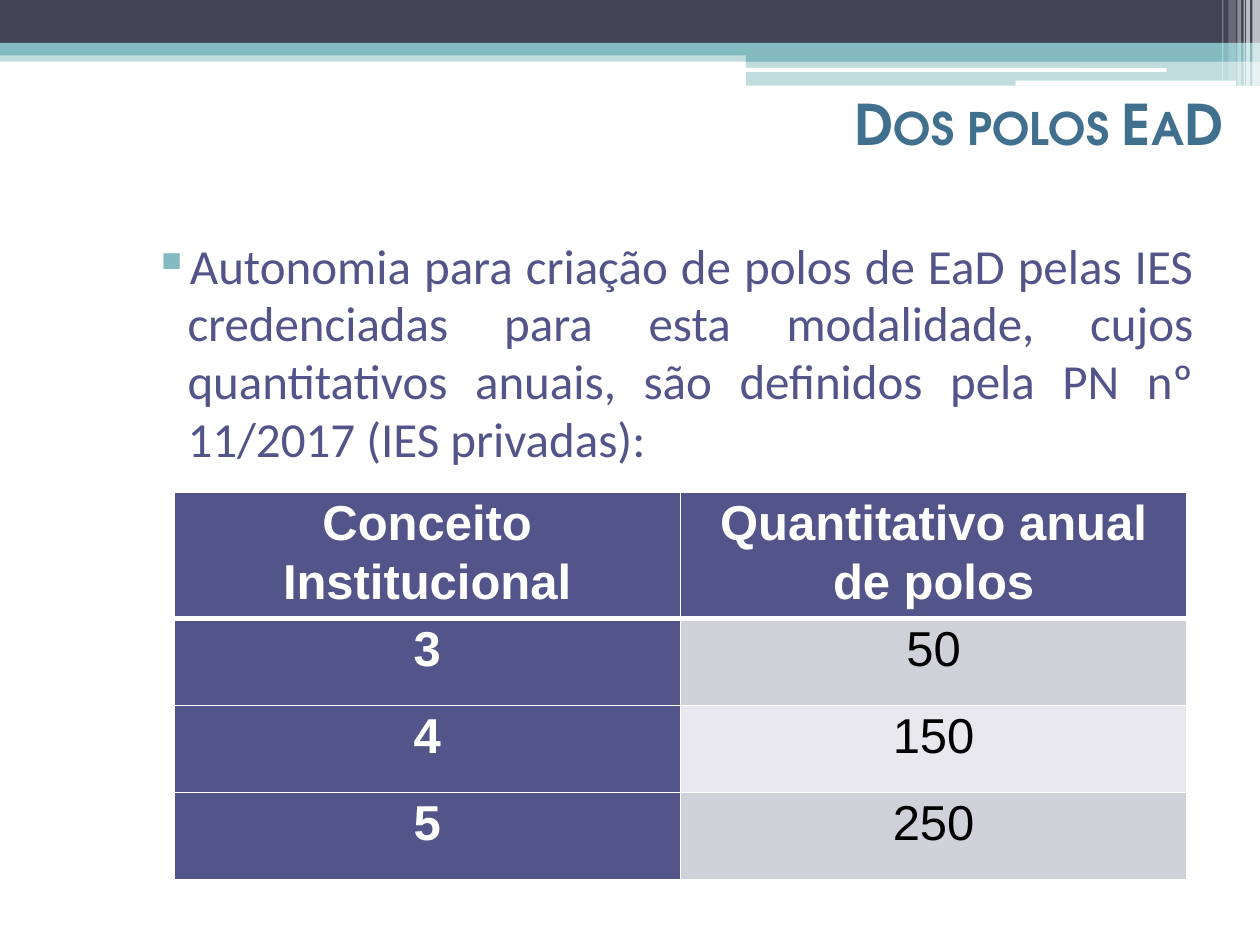
from lxml import etree
from pptx import Presentation
from pptx import util as u
from pptx.dml.color import RGBColor
from pptx.enum import shapes, text
from pptx.oxml import ns

WHITE = RGBColor(0xFF, 0xFF, 0xFF)
BLACK = RGBColor(0x00, 0x00, 0x00)
TEAL = RGBColor(0x83, 0xBB, 0xC1)
SLATE = RGBColor(0x42, 0x44, 0x56)
BLUE = RGBColor(0x41, 0x70, 0x8E)
PLUM = RGBColor(0x53, 0x54, 0x8A)
GRAY = RGBColor(0xD1, 0xD1, 0xDA)
PALE = RGBColor(0xE9, 0xE9, 0xED)

deck = Presentation()
deck.slide_width, deck.slide_height = u.Inches(10), u.Inches(7.5)
COL, ROW = deck.slide_width / 100, deck.slide_height / 75
slide = deck.slides.add_slide(deck.slide_layouts[5])


def grid(x, y, wide, high):
    return int(x * COL), int(y * ROW), int(wide * COL), int(high * ROW)


def style(para, face, size, color, bold, align):
    para.alignment = align
    font = para.font
    font.name, font.size, font.bold = face, u.Pt(size), bold
    font.color.rgb = color


RECT = shapes.MSO_SHAPE.RECTANGLE
PILL = shapes.MSO_SHAPE.ROUNDED_RECTANGLE
bands = [
    (RECT, 0, 4, 100, 0.9, TEAL, 50),
    (RECT, 0, 0, 100, 3.4, SLATE, 100),
    (RECT, 0, 3.4, 100, 1, TEAL, 100),
    (RECT, 59.2, 3.9, 40.8, 1, TEAL, 100),
    (RECT, 59.2, 4.8, 40.8, 2, TEAL, 50),
    (PILL, 59.1, 5.4, 33.5, 0.3, WHITE, 100),
    (PILL, 80.6, 6.4, 17.5, 0.4, WHITE, 100),
]
lines = [(99.4, 0.6, 6.8, 65), (98.9, 0.3, 6.8, 65), (98.7, 0.1, 6.8, 60),
         (98.2, 0.3, 6.8, 40), (97.5, 0.6, 6.4, 20), (97, 0.1, 6.4, 30)]
bands += [(RECT, x, 0, wide, high, WHITE, alpha) for x, wide, high, alpha in lines]

for kind, x, y, wide, high, color, alpha in bands:
    band = slide.shapes.add_shape(kind, *grid(x, y, wide, high))
    band.shadow.inherit = False
    band.line.fill.background()
    band.fill.solid()
    band.fill.fore_color.rgb = color
    if alpha < 100:
        tint = band.fill._xPr.find(".//" + ns.qn("a:srgbClr"))
        etree.SubElement(tint, ns.qn("a:alpha"), val=str(alpha * 1000))

title = slide.shapes.title
slide.shapes._spTree.append(title._element)
title.left, title.top, title.width, title.height = grid(2, 6.4, 96.1, 6.7)
title.text_frame.text = "Dos polos EaD"
title.text_frame.vertical_anchor = text.MSO_ANCHOR.MIDDLE
para = title.text_frame.paragraphs[0]
style(para, "TeX Gyre Adventor", 32, BLUE, True, text.PP_ALIGN.RIGHT)
para.runs[0]._r.get_or_add_rPr().set("cap", "small")

body = slide.shapes.add_textbox(*grid(6.7, 13.2, 89, 48.5)).text_frame
body.word_wrap = True
body.margin_top = int(5.7 * ROW)
para = body.paragraphs[0]
para.text = ("Autonomia para criação de polos de EaD pelas IES credenciadas para esta "
             "modalidade, cujos quantitativos anuais, são definidos pela PN nº 11/2017 "
             "(IES privadas):")
style(para, "Calibri", 28, PLUM, False, text.PP_ALIGN.JUSTIFY)
para.line_spacing = 0.98
props = para._p.get_or_add_pPr()
props.set("marL", str(int(7.2 * COL)))
props.set("indent", str(int(-2.7 * COL)))
mark = etree.Element(ns.qn("a:buClr"))
etree.SubElement(mark, ns.qn("a:srgbClr"), val=str(TEAL))
sign = etree.Element(ns.qn("a:buChar"), char="▪")
first = props.find(ns.qn("a:defRPr"))
first.addprevious(mark)
first.addprevious(sign)

data = [("Conceito Institucional", "Quantitativo anual de polos"),
        ("3", "50"), ("4", "150"), ("5", "250")]
table = slide.shapes.add_table(4, 2, *grid(13.8, 39.1, 80.4, 30.7)).table
for r, pair in enumerate(data):
    table.rows[r].height = int((6.9 if r else 10) * ROW)
    for c, word in enumerate(pair):
        cell = table.cell(r, c)
        head = r == 0 or c == 0
        cell.fill.solid()
        cell.fill.fore_color.rgb = PLUM if head else GRAY if r % 2 else PALE
        cell.margin_left = cell.margin_right = int(0.7 * COL)
        cell.margin_top = cell.margin_bottom = 0
        cell.text = word
        para = cell.text_frame.paragraphs[0]
        style(para, "Arial", 28, WHITE if head else BLACK, head, text.PP_ALIGN.CENTER)
        para.line_spacing = 1.07
        thick = {"lnB": 0, "lnT": 1}
        for i, side in enumerate(("lnL", "lnR", "lnT", "lnB")):
            size = 3 if thick.get(side) == r else 1
            edge = etree.Element(ns.qn("a:" + side), w=str(u.Pt(size)))
            fill = etree.SubElement(edge, ns.qn("a:solidFill"))
            etree.SubElement(fill, ns.qn("a:srgbClr"), val=str(WHITE))
            cell._tc.get_or_add_tcPr().insert(i, edge)

deck.save("out.pptx")
